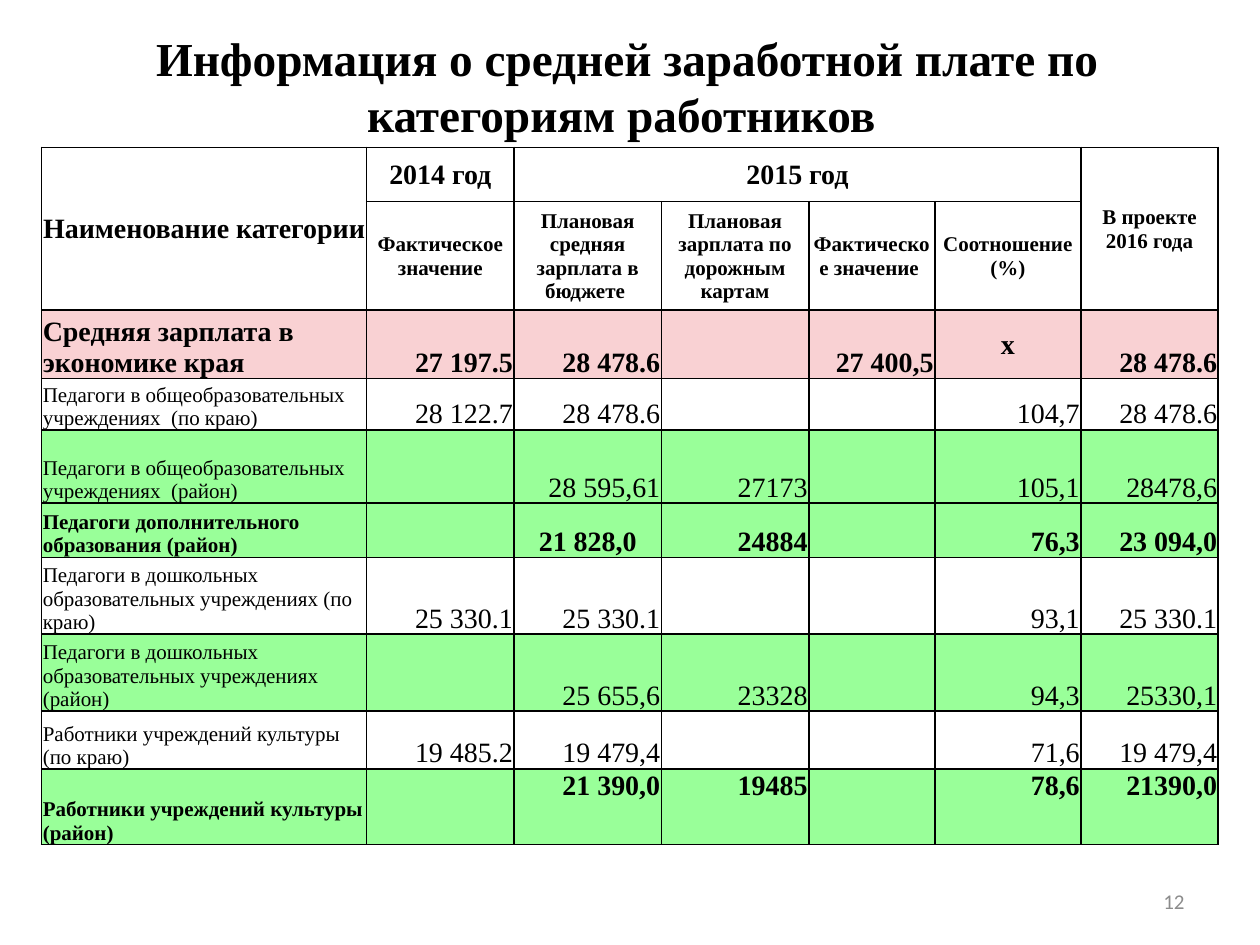
from lxml import etree
from pptx import Presentation
from pptx.dml.color import RGBColor
from pptx.enum import text
from pptx.oxml import ns
from pptx.util import Inches, Pt

BLACK = RGBColor(0x00, 0x00, 0x00)
GRAY = RGBColor(0x8C, 0x8C, 0x8C)
WHITE = RGBColor(0xFF, 0xFF, 0xFF)
PINK = RGBColor(0xF9, 0xD1, 0xD3)
GREEN = RGBColor(0x99, 0xFF, 0x99)

LEFT, CENTER, RIGHT = text.PP_ALIGN.LEFT, text.PP_ALIGN.CENTER, text.PP_ALIGN.RIGHT
TOP, MIDDLE, BOTTOM = (text.MSO_ANCHOR.TOP, text.MSO_ANCHOR.MIDDLE,
                       text.MSO_ANCHOR.BOTTOM)

COLUMNS = [2.58, 1.17, 1.17, 1.17, 1, 1.16, 1.09]
ROWS = [0.43, 0.86, 0.53, 0.4, 0.58, 0.43, 0.6, 0.6, 0.46, 0.6]

# Row, column, last row, last column, wording, size
HEADER = [
    (0, 0, 1, 0, "Наименование категории", 16),
    (0, 1, 0, 1, "2014 год", 16),
    (0, 2, 0, 5, "2015 год", 16),
    (0, 6, 1, 6, "В проекте 2016 года", 12),
    (1, 1, 1, 1, "Фактическое значение", 12),
    (1, 2, 1, 2, "Плановая средняя зарплата в бюджете ", 12),
    (1, 3, 1, 3, "Плановая зарплата по дорожным картам", 12),
    (1, 4, 1, 4, "Фактическое значение ", 12),
    (1, 5, 1, 5, "Соотношение (%)", 12),
]

# Fill, bold, label size, label, values
BODY = [
    (PINK, True, 16, "Средняя зарплата в экономике края",
     ["27 197.5", "28 478.6", "", "27 400,5", "х", "28 478.6"]),
    (WHITE, False, 12, "Педагоги в общеобразовательных учреждениях  (по краю)",
     ["28 122.7", "28 478.6", "", "", "104,7", "28 478.6"]),
    (GREEN, False, 12, "Педагоги в общеобразовательных учреждениях  (район)",
     ["", "28 595,61", "27173", "", "105,1", "28478,6"]),
    (GREEN, True, 12, "Педагоги дополнительного образования (район)",
     ["", "21 828,0", "24884", "", "76,3", "23 094,0"]),
    (WHITE, False, 12, "Педагоги в дошкольных образовательных учреждениях (по краю)",
     ["25 330.1", "25 330.1", "", "", "93,1", "25 330.1"]),
    (GREEN, False, 12, "Педагоги в дошкольных образовательных учреждениях (район)",
     ["", "25 655,6", "23328", "", "94,3", "25330,1"]),
    (WHITE, False, 12, "Работники учреждений культуры (по краю)",
     ["19 485.2", "19 479,4", "", "", "71,6", "19 479,4"]),
    (GREEN, True, 12, "Работники учреждений культуры (район)",
     ["", "21 390,0", "19485", "", "78,6", "21390,0"]),
]


class SlideBuilder:
    font = "Times New Roman"
    border = Pt(1)
    margins = {"margin_left": Inches(0.01), "margin_right": Inches(0.01),
               "margin_top": Inches(0.01), "margin_bottom": 0}

    def __init__(self, slide):
        self.slide = slide

    def add_words(self, tf, words, align, color=BLACK, **font):
        p = tf.paragraphs[0]
        p.alignment = align
        r = p.add_run()
        r.text = words
        r.font.color.rgb = color
        for name, value in {"name": self.font, **font}.items():
            setattr(r.font, name, value)

    def text_box(self, box, words, align, **font):
        tf = self.slide.shapes.add_textbox(*map(Inches, box)).text_frame
        tf.word_wrap = True
        tf.vertical_anchor = MIDDLE
        self.add_words(tf, words, align, **font)

    def table(self, left, top, columns, rows):
        """Add an empty table with plain white, bordered cells."""
        frame = self.slide.shapes.add_table(
            len(rows), len(columns), Inches(left), Inches(top),
            Inches(sum(columns)), Inches(sum(rows)))
        table = frame.table
        table.first_row = table.horz_banding = False
        for column, width in zip(table.columns, columns):
            column.width = Inches(width)
        for row, height in zip(table.rows, rows):
            row.height = Inches(height)
        for cell in table.iter_cells():
            for name, value in self.margins.items():
                setattr(cell, name, value)
            self.outline(cell)
            self.fill(cell, WHITE)
        return table

    def fill(self, cell, color):
        cell.fill.solid()
        cell.fill.fore_color.rgb = color

    def outline(self, cell):
        props = cell._tc.get_or_add_tcPr()
        for side in ("a:lnL", "a:lnR", "a:lnT", "a:lnB"):
            line = etree.SubElement(props, ns.qn(side), w=str(self.border))
            solid = etree.SubElement(line, ns.qn("a:solidFill"))
            etree.SubElement(solid, ns.qn("a:srgbClr"), val=str(BLACK))

    def cell(self, cell, words, align, anchor, size, bold):
        cell.vertical_anchor = anchor
        if words:
            self.add_words(cell.text_frame, words, align, size=Pt(size), bold=bold)


def main():
    prs = Presentation()
    prs.slide_width, prs.slide_height = Inches(10), Inches(7.5)
    s = SlideBuilder(prs.slides.add_slide(prs.slide_layouts[6]))

    s.text_box((0.43, 0.21, 9, 0.94),
               " Информация о средней заработной плате по категориям работников",
               CENTER, size=Pt(27), bold=True)

    table = s.table(0.33, 1.17, COLUMNS, ROWS)
    for row, col, last_row, last_col, words, size in HEADER:
        cell = table.cell(row, col)
        if (row, col) != (last_row, last_col):
            cell.merge(table.cell(last_row, last_col))
        s.cell(cell, words, CENTER, MIDDLE, size, True)

    for row, (color, bold, label_size, label, values) in enumerate(BODY, 2):
        for col, words in enumerate([label] + values):
            cell = table.cell(row, col)
            s.fill(cell, color)
            align = RIGHT if col else LEFT
            anchor = TOP if col and row == len(ROWS) - 1 else BOTTOM
            if words == "х":
                align, anchor = CENTER, MIDDLE
            elif words == "21 828,0":
                align = CENTER
            s.cell(cell, words, align, anchor, 16 if col else label_size, bold)

    s.text_box((7.17, 6.95, 2.33, 0.4), "12", RIGHT, color=GRAY,
               name="Calibri", size=Pt(12))
    prs.save("out.pptx")


if __name__ == "__main__":
    main()
